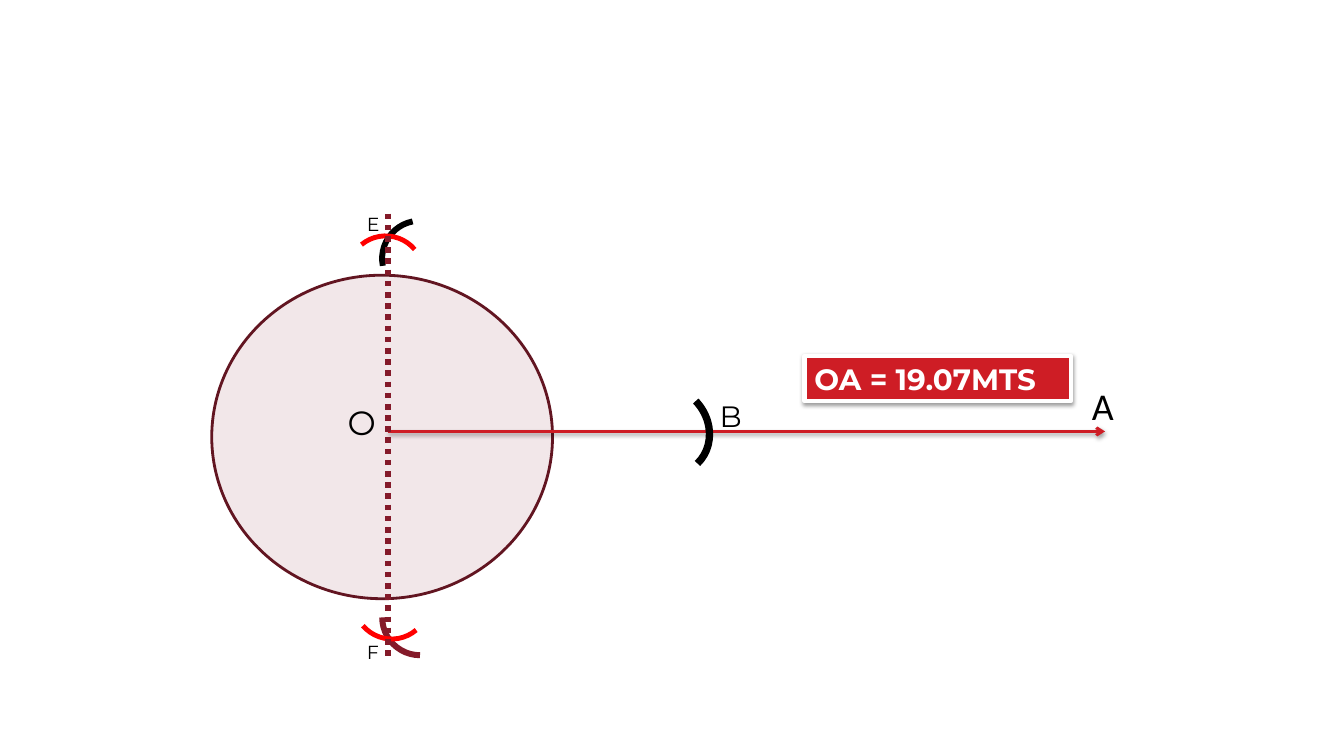
from lxml import etree
from pptx import Presentation
from pptx.dml.color import RGBColor
from pptx.enum.dml import MSO_LINE
from pptx.enum.shapes import MSO_CONNECTOR, MSO_SHAPE
from pptx.enum.text import MSO_ANCHOR, PP_ALIGN
from pptx.oxml.ns import qn
from pptx.util import Inches, Pt


def rgb(color):
    return RGBColor.from_string(color)


def set_effect(sp, shadow):
    """Give a shape a soft drop shadow, or an empty effect list."""
    spPr = sp._element.spPr
    for old in spPr.findall(qn("a:effectLst")):
        spPr.remove(old)
    effects = etree.SubElement(spPr, qn("a:effectLst"))
    if shadow:
        outer = etree.SubElement(effects, qn("a:outerShdw"), blurRad=str(Pt(3.1)),
                                 dist=str(Pt(1.6)), dir="5400000", rotWithShape="0")
        black = etree.SubElement(outer, qn("a:srgbClr"), val="000000")
        etree.SubElement(black, qn("a:alpha"), val="38000")


prs = Presentation()
prs.slide_width, prs.slide_height = Inches(13.33), Inches(7.5)
s = prs.slides.add_slide(prs.slide_layouts[6])
axis_x, axis_y = 3.85, 4.28

# Circle around O
circle = s.shapes.add_shape(MSO_SHAPE.FLOWCHART_CONNECTOR, Inches(2.1), Inches(2.73),
                            Inches(3.38), Inches(3.21))
circle.shadow.inherit = False
circle.fill.solid()
circle.fill.fore_color.rgb = rgb("841D2C")
tint = circle._element.spPr.find(qn("a:solidFill")).find(qn("a:srgbClr"))
etree.SubElement(tint, qn("a:alpha"), val="10000")
circle.line.color.rgb = rgb("621521")
circle.line.width = Pt(2)

# Arrow from O to A
arrow = s.shapes.add_connector(MSO_CONNECTOR.STRAIGHT, Inches(axis_x), Inches(axis_y),
                               Inches(10.96), Inches(axis_y))
arrow.line.color.rgb = rgb("CE1D25")
arrow.line.width = Pt(2)
etree.SubElement(arrow.line._get_or_add_ln(), qn("a:tailEnd"), type="arrow")
set_effect(arrow, True)

# Length of OA
box = s.shapes.add_shape(MSO_SHAPE.RECTANGLE, Inches(7.98), Inches(3.53),
                         Inches(2.64), Inches(0.45))
box.fill.solid()
box.fill.fore_color.rgb = rgb("CE1D25")
box.line.color.rgb = rgb("FFFFFF")
box.line.width = Pt(3)
set_effect(box, True)
tf = box.text_frame
tf.word_wrap = True
tf.vertical_anchor = MSO_ANCHOR.MIDDLE
p = tf.paragraphs[0]
p.alignment = PP_ALIGN.LEFT
r = p.add_run()
r.text = "OA = 19.07MTS"
for name, value in {"name": "Montserrat", "size": Pt(21), "bold": True}.items():
    setattr(r.font, name, value)
r.font.color.rgb = rgb("FFFFFF")

# Compass arcs: left, top, width, height, rotation, colour, line width
arcs = [
    (6.14, 3.85, 0.92, 0.83, 46.4, "000000", 5.25),
    (3.79, 2.19, 0.75, 0.75, 258.9, "000000", 4.25),
    (3.45, 2.34, 0.75, 0.75, 320.2, "FF0000", 3.5),
    (3.79, 5.75, 0.75, 0.75, 180, "841A29", 4.25),
    (3.51, 5.59, 0.75, 0.75, 139.7, "FF0000", 3.5),
]
for left, top, width, height, rotation, color, weight in arcs:
    arc = s.shapes.add_shape(MSO_SHAPE.ARC, Inches(left), Inches(top),
                             Inches(width), Inches(height))
    arc.shadow.inherit = False
    arc.rotation = rotation
    arc.fill.background()
    arc.line.color.rgb = rgb(color)
    arc.line.width = Pt(weight)

# Dotted perpendicular through E and F
bisector = s.shapes.add_connector(MSO_CONNECTOR.STRAIGHT, Inches(axis_x), Inches(2.12),
                                  Inches(axis_x), Inches(6.56))
bisector.line.color.rgb = rgb("841A29")
bisector.line.width = Pt(4)
bisector.line.dash_style = MSO_LINE.ROUND_DOT
set_effect(bisector, False)

# Point labels: text, left, top, width, height, size, font
labels = [
    ("O", 3.35, 3.94, 0.48, 0.51, 24, "Montserrat"),
    ("A", 10.73, 3.75, 0.42, 0.56, 27, "Calibri"),
    ("B", 7.04, 3.9, 0.43, 0.45, 21, "Montserrat"),
    ("E", 3.54, 2.06, 0.34, 0.33, 13.5, "Montserrat"),
    ("F", 3.54, 6.31, 0.33, 0.33, 13.5, "Montserrat"),
]
for text, left, top, width, height, size, font in labels:
    tf = s.shapes.add_textbox(Inches(left), Inches(top),
                              Inches(width), Inches(height)).text_frame
    tf.word_wrap = False
    r = tf.paragraphs[0].add_run()
    r.text = text
    for name, value in {"name": font, "size": Pt(size)}.items():
        setattr(r.font, name, value)
    r.font.color.rgb = rgb("000000")

prs.save("out.pptx")
